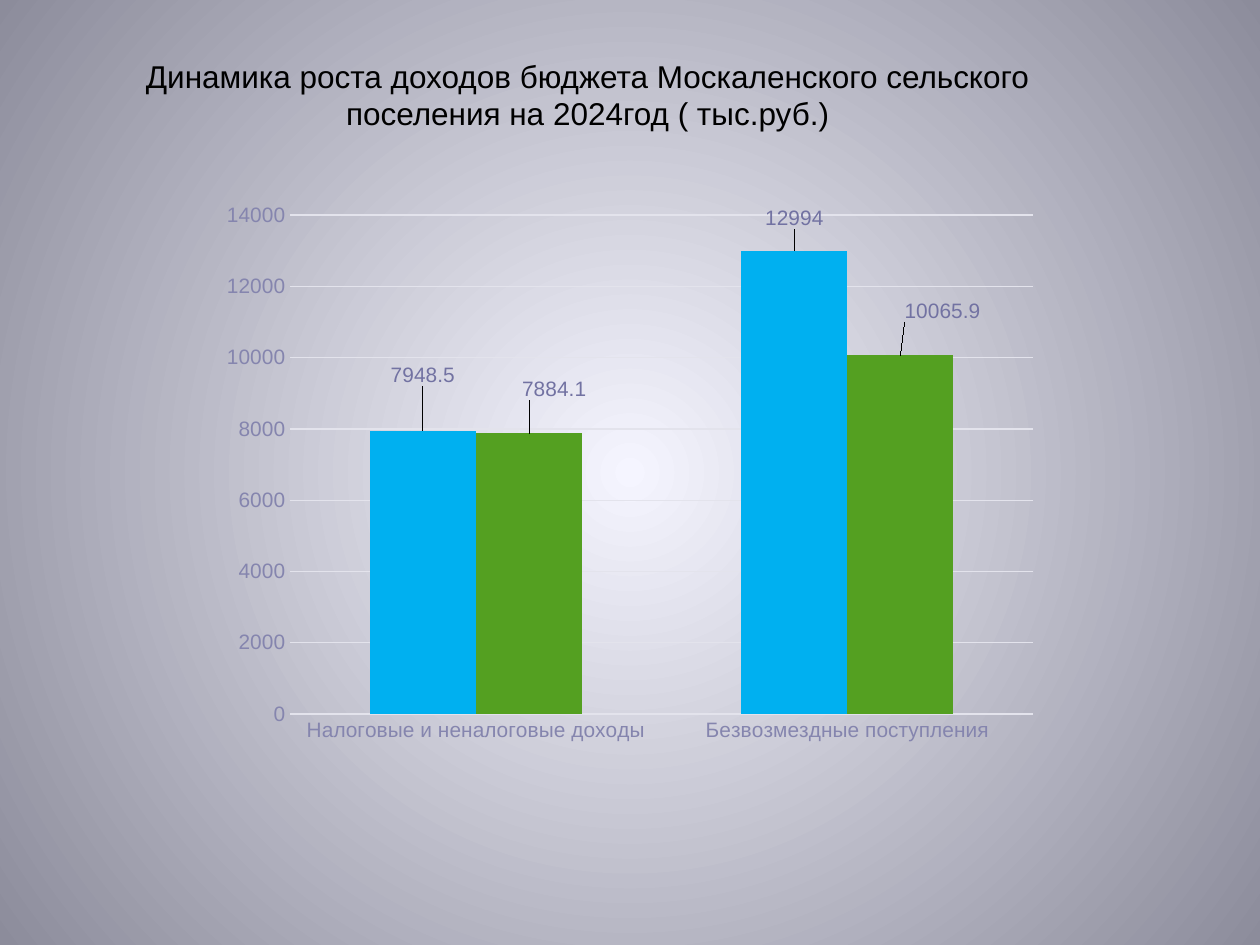
from pptx import Presentation
from pptx.chart.data import CategoryChartData
from pptx.dml.color import RGBColor
from pptx.enum.chart import XL_CHART_TYPE, XL_LABEL_POSITION, XL_TICK_MARK
from pptx.enum.text import MSO_ANCHOR, PP_ALIGN
from pptx.oxml import parse_xml
from pptx.oxml.ns import nsdecls
from pptx.util import Inches, Pt

FONT = "Arial"
TITLE = "Динамика роста доходов бюджета Москаленского сельского поселения на 2024год ( тыс.руб.)"
CATEGORIES = ["Налоговые и неналоговые доходы", "Безвозмездные поступления"]
SERIES = [
    {"name": "Series 1", "values": [7948.5, 12994], "color": "00B0F0",
     "label_shifts": [(0, -0.07), (0, -0.03)]},
    {"name": "Series 2", "values": [7884.1, 10065.9], "color": "54A021",
     "label_shifts": [(0.03, -0.05), (0.05, -0.05)]},
]
PLOT_AREA = {"x": 0.095, "y": 0.04, "w": 0.884, "h": 0.892}


def color(hex_value):
    """Turn a hex string into a colour."""
    return RGBColor.from_string(hex_value)


def apply(target, values):
    """Set every attribute in a dict on the target."""
    for name, value in values.items():
        setattr(target, name, value)


def style_font(font, size, hex_value):
    """Set the typeface, size and colour of a font."""
    apply(font, {"name": FONT, "size": Pt(size), "bold": False})
    font.color.rgb = color(hex_value)


def set_background(slide, center, edge):
    """Fill the slide with a circular gradient."""
    fill = slide.background.fill
    fill.gradient()
    for stop, position, hex_value in zip(fill.gradient_stops, (0, 1), (center, edge)):
        stop.position = position
        stop.color.rgb = color(hex_value)
    linear = slide.background._cSld.xpath(".//a:gradFill/a:lin")[0]
    circle = parse_xml(
        f'<a:path {nsdecls("a")} path="circle">'
        '<a:fillToRect l="50000" t="50000" r="50000" b="50000"/></a:path>')
    linear.getparent().replace(linear, circle)


def add_title(slide):
    """Add the centred slide title."""
    shape = slide.shapes.add_textbox(Inches(0.55), Inches(0.25), Inches(8.23), Inches(1))
    frame = shape.text_frame
    apply(frame, {"word_wrap": True, "vertical_anchor": MSO_ANCHOR.MIDDLE})
    paragraph = frame.paragraphs[0]
    apply(paragraph, {"text": TITLE, "alignment": PP_ALIGN.CENTER})
    style_font(paragraph.runs[0].font, 18, "000000")


def make_layout(values, target=None):
    """Build a manual chart layout from fractions of the chart size."""
    parts = f'<c:layoutTarget val="{target}"/>' if target else ""
    if target:
        parts += '<c:xMode val="edge"/><c:yMode val="edge"/>'
    parts += "".join(f'<c:{name} val="{value}"/>' for name, value in values.items())
    return parse_xml(
        f'<c:layout {nsdecls("c")}><c:manualLayout>{parts}</c:manualLayout></c:layout>')


def style_axis(axis):
    """Hide the axis line and ticks and set its label font."""
    apply(axis, {"major_tick_mark": XL_TICK_MARK.NONE, "minor_tick_mark": XL_TICK_MARK.NONE})
    axis.format.line.fill.background()
    style_font(axis.tick_labels.font, 11.9, "8585AE")


def style_series(series, details):
    """Colour one series and place its value labels."""
    series.format.fill.solid()
    series.format.fill.fore_color.rgb = color(details["color"])
    series.data_labels.show_value = True
    style_font(series.data_labels.font, 11.9, "7272A2")
    for index, (x, y) in enumerate(details["label_shifts"]):
        label = series.points[index].data_label
        style_font(label.font, 11.9, "7272A2")
        label.position = XL_LABEL_POSITION.OUTSIDE_END
        element = series._element.xpath(f"c:dLbls/c:dLbl[c:idx/@val='{index}']")[0]
        element.insert(1, make_layout({"x": x, "y": y}))


def add_income_chart(slide):
    """Add the clustered column chart of budget income."""
    data = CategoryChartData()
    data.categories = CATEGORIES
    for details in SERIES:
        data.add_series(details["name"], details["values"])
    chart = slide.shapes.add_chart(
        XL_CHART_TYPE.COLUMN_CLUSTERED, Inches(1.67), Inches(1.53),
        Inches(6.67), Inches(4.44), data).chart
    apply(chart, {"has_legend": False, "has_title": False})
    style_font(chart.font, 10, "4F4F77")
    style_axis(chart.category_axis)
    style_axis(chart.value_axis)
    apply(chart.value_axis, {"minimum_scale": 0, "maximum_scale": 14000, "major_unit": 2000})
    grid = chart.value_axis.major_gridlines.format.line
    grid.width = Pt(0.75)
    grid.color.rgb = color("E3E3EC")
    plot = chart.plots[0]
    apply(plot, {"gap_width": 150, "overlap": 0, "vary_by_categories": False})
    for series, details in zip(plot.series, SERIES):
        style_series(series, details)
    plot_area = chart._chartSpace.xpath("c:chart/c:plotArea")[0]
    for layout in plot_area.xpath("c:layout"):
        plot_area.remove(layout)
    plot_area.insert(0, make_layout(PLOT_AREA, "inner"))


def main():
    """Build and save the presentation."""
    presentation = Presentation()
    apply(presentation, {"slide_width": Inches(10), "slide_height": Inches(7.5)})
    slide = presentation.slides.add_slide(presentation.slide_layouts[6])
    set_background(slide, "F5F5FF", "8C8C9B")
    add_title(slide)
    add_income_chart(slide)
    presentation.save("out.pptx")


if __name__ == "__main__":
    main()
